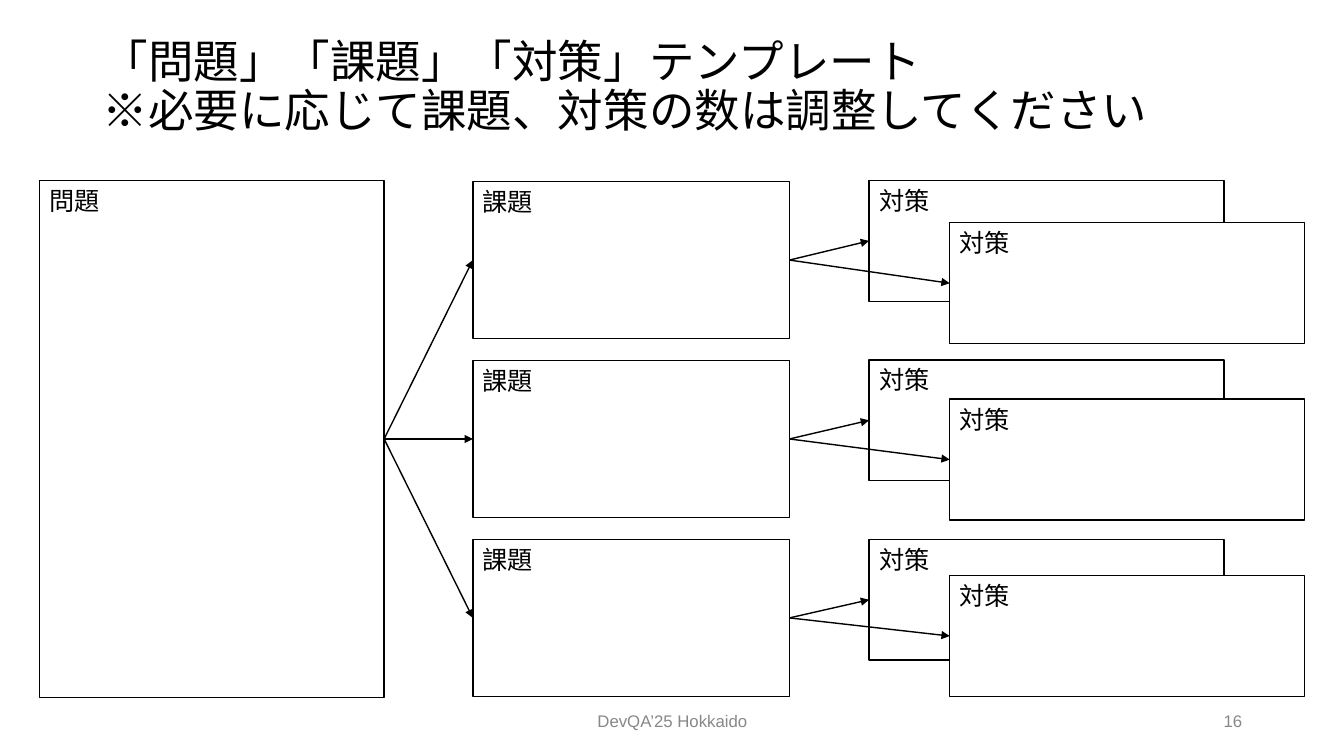
from lxml import etree
from pptx import Presentation
from pptx.dml.color import RGBColor
from pptx.enum import shapes, text
from pptx.oxml import ns
from pptx.util import Inches, Pt

COLORS = {"ink": "000000", "paper": "FFFFFF", "footer": "888888"}
FONT = "Arial"
TOP, RIGHT, LEFT = 0, 3, 1
ROWS = 3


def color(name):
    return RGBColor.from_string(COLORS[name])


def write_text(frame, content, size=18, ink="ink", align=text.PP_ALIGN.LEFT,
               anchor=text.MSO_ANCHOR.TOP, spacing=None, bottom=0.05):
    frame.word_wrap = True
    frame.vertical_anchor = anchor
    frame.margin_left = frame.margin_right = Inches(0.1)
    frame.margin_top, frame.margin_bottom = Inches(0.05), Inches(bottom)
    paragraph = frame.paragraphs[0]
    paragraph.text = content
    paragraph.alignment = align
    paragraph.line_spacing = spacing
    for run in paragraph.runs:
        run.font.name = FONT
        run.font.size = Pt(size)
        run.font.color.rgb = color(ink)


def add_label(slide, bounds, content, **text_format):
    label = slide.shapes.add_textbox(*map(Inches, bounds))
    write_text(label.text_frame, content,
               anchor=text.MSO_ANCHOR.MIDDLE, **text_format)


def add_card(slide, bounds, heading):
    card = slide.shapes.add_shape(shapes.MSO_SHAPE.RECTANGLE, *map(Inches, bounds))
    card.shadow.inherit = False
    card.fill.solid()
    card.fill.fore_color.rgb = color("paper")
    card.line.color.rgb = color("ink")
    card.line.width = Pt(1)
    write_text(card.text_frame, heading)
    return card


def add_arrow(slide, source, target):
    arrow = slide.shapes.add_connector(shapes.MSO_CONNECTOR.STRAIGHT, 0, 0, 0, 0)
    arrow.begin_connect(source, RIGHT)
    arrow.end_connect(target, LEFT)
    arrow.line.color.rgb = color("ink")
    arrow.line.width = Pt(1)
    # Arrowhead and no shadow
    etree.SubElement(arrow.line._get_or_add_ln(), ns.qn("a:tailEnd"), type="triangle")
    etree.SubElement(arrow._element.spPr, ns.qn("a:effectLst"))


def main():
    deck = Presentation()
    deck.slide_width, deck.slide_height = Inches(13.33), Inches(7.5)
    slide = deck.slides.add_slide(deck.slide_layouts[6])

    # Title, set in the upper part of its box
    add_label(slide, (0.92, 0.4, 11.5, 1.45),
              "「問題」「課題」「対策」テンプレート\v※必要に応じて課題、対策の数は調整してください",
              size=32.5, spacing=0.9, bottom=0.54)

    # Problem, then one issue with two overlapping measures per row
    problem = add_card(slide, (0.39, 1.79, 3.42, 5.13), "問題")
    for row in range(ROWS):
        issue = add_card(slide, (4.69, 1.8 + 1.775 * row, 3.14, 1.56), "課題")
        rear_measure = add_card(slide, (8.62, 1.79 + 1.78 * row, 3.52, 1.2), "対策")
        front_measure = add_card(slide, (9.42, 2.21 + 1.75 * row, 3.52, 1.2), "対策")
        add_arrow(slide, problem, issue)
        add_arrow(slide, issue, rear_measure)
        add_arrow(slide, issue, front_measure)

    # Footer
    add_label(slide, (4.42, 6.95, 4.5, 0.4), "DevQA’25 Hokkaido",
              size=12, ink="footer", align=text.PP_ALIGN.CENTER)
    add_label(slide, (9.42, 6.95, 3, 0.4), "16",
              size=12, ink="footer", align=text.PP_ALIGN.RIGHT)

    deck.save("out.pptx")


if __name__ == "__main__":
    main()
